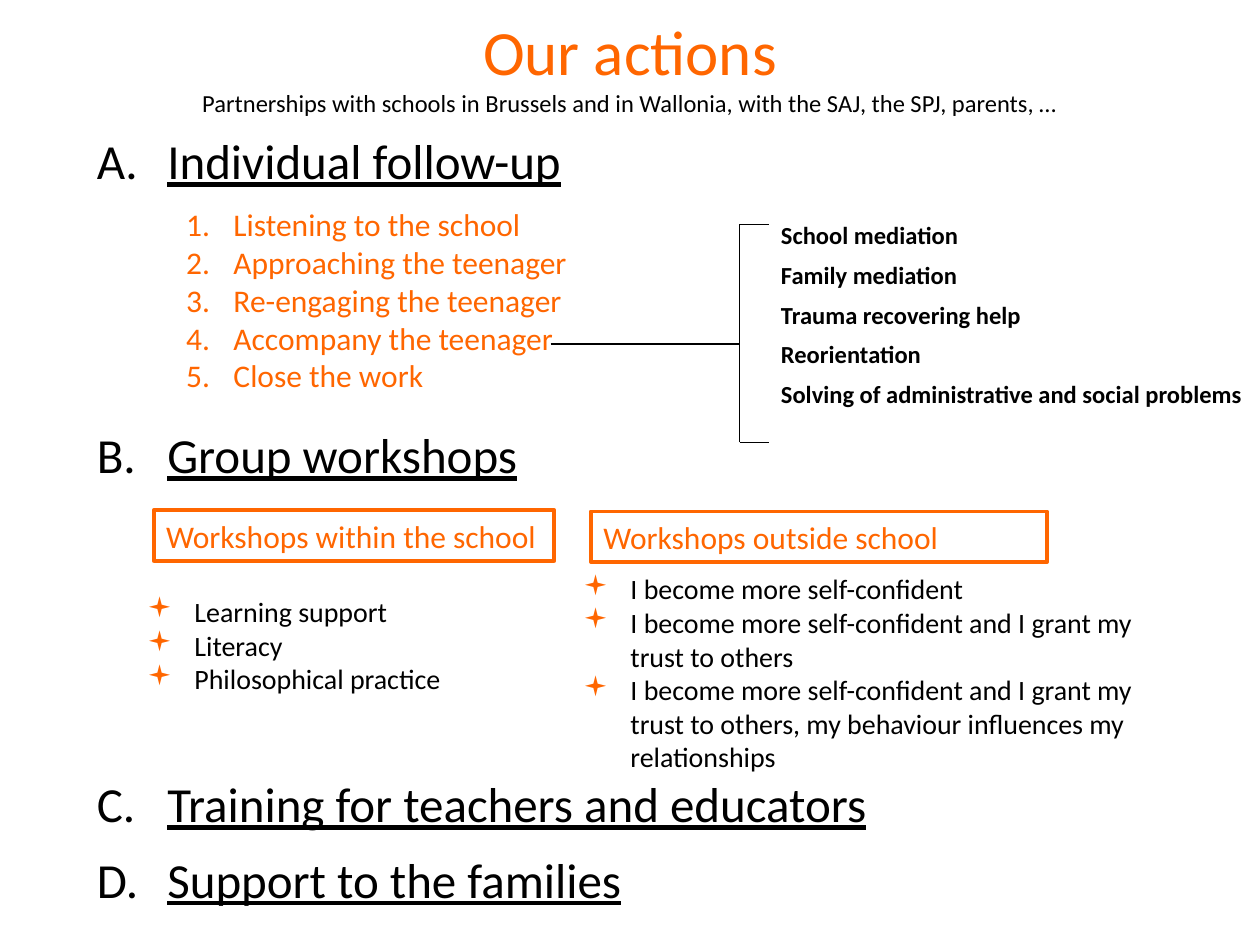
from dataclasses import dataclass

from lxml import etree
from pptx import Presentation
from pptx.dml.color import RGBColor
from pptx.enum.shapes import MSO_CONNECTOR, MSO_SHAPE
from pptx.enum.text import MSO_ANCHOR, PP_ALIGN
from pptx.oxml.ns import qn
from pptx.util import Inches, Pt

STRAIGHT = MSO_CONNECTOR.STRAIGHT
RECTANGLE = MSO_SHAPE.RECTANGLE
TOP, MIDDLE = MSO_ANCHOR.TOP, MSO_ANCHOR.MIDDLE
LEFT, CENTER = PP_ALIGN.LEFT, PP_ALIGN.CENTER
ORANGE, BLACK = "FF6600", "000000"
FONT = "Calibri"
COLUMNS, ROWS = 100, 75  # grid over the slide

prs = Presentation()
prs.slide_width, prs.slide_height = Inches(10), Inches(7.5)
slide = prs.slides.add_slide(prs.slide_layouts[6])


@dataclass(frozen=True)
class Area:
    """A rectangle in grid columns and rows."""
    column: float
    row: float
    columns: float
    rows: float

    def box(self) -> tuple[int, int, int, int]:
        return x(self.column), y(self.row), x(self.columns), y(self.rows)


@dataclass(frozen=True)
class Style:
    size: float
    color: str = BLACK
    bold: bool = False
    underline: bool = False


@dataclass(frozen=True)
class Marker:
    """A list marker: an automatic number scheme, or else a square bullet."""
    indent: float
    scheme: str = ""
    start: int = 1


@dataclass(frozen=True)
class Section:
    title: str
    row: float


@dataclass(frozen=True)
class Workshop:
    title: str
    frame: Area
    topics: list[str]
    topics_area: Area


def x(columns: float) -> int:
    return round(prs.slide_width * columns / COLUMNS)


def y(rows: float) -> int:
    return round(prs.slide_height * rows / ROWS)


def rgb(color: str) -> RGBColor:
    return RGBColor.from_string(color)


def mark(paragraph, marker: Marker) -> None:
    props = paragraph._p.get_or_add_pPr()
    indent = x(marker.indent)
    props.set("marL", str(indent))
    props.set("indent", str(-indent))
    if marker.scheme:
        etree.SubElement(props, qn("a:buFont"), typeface="+mj-lt")
        etree.SubElement(props, qn("a:buAutoNum"), type=marker.scheme,
                         startAt=str(marker.start))
    else:
        bullet_color = etree.SubElement(props, qn("a:buClr"))
        etree.SubElement(bullet_color, qn("a:srgbClr"), val=ORANGE)
        etree.SubElement(props, qn("a:buFont"), typeface="Wingdings")
        etree.SubElement(props, qn("a:buChar"), char="▪")


def write(paragraph, text: str, style: Style, align=LEFT) -> None:
    paragraph.alignment = align
    run = paragraph.add_run()
    run.text = text
    formats = {"name": FONT, "size": Pt(style.size), "bold": style.bold,
               "underline": style.underline}
    for attribute, value in formats.items():
        setattr(run.font, attribute, value)
    run.font.color.rgb = rgb(style.color)


def add_text(area: Area, lines: list[str], styles: list[Style], align=LEFT,
             marker: Marker | None = None, wrap: bool = True) -> None:
    """Write one paragraph per line; the last style serves all further lines."""
    frame = slide.shapes.add_textbox(*area.box()).text_frame
    frame.word_wrap = wrap
    frame.vertical_anchor = TOP
    for i, line in enumerate(lines):
        paragraph = frame.add_paragraph() if i else frame.paragraphs[0]
        write(paragraph, line, styles[min(i, len(styles) - 1)], align)
        if marker:
            mark(paragraph, marker)


def add_frame(area: Area, title: str) -> None:
    frame = slide.shapes.add_shape(RECTANGLE, *area.box())
    frame.shadow.inherit = False
    frame.fill.background()
    frame.line.color.rgb = rgb(ORANGE)
    frame.line.width = Pt(2.25)
    frame.text_frame.word_wrap = True
    frame.text_frame.vertical_anchor = MIDDLE
    write(frame.text_frame.paragraphs[0], title, Style(18, ORANGE))


def add_line(start: tuple[float, float], end: tuple[float, float]) -> None:
    line = slide.shapes.add_connector(
        STRAIGHT, x(start[0]), y(start[1]), x(end[0]), y(end[1]))
    line.line.color.rgb = rgb(BLACK)
    line.line.width = Pt(0.75)
    etree.SubElement(line._element.spPr, qn("a:effectLst"))


SECTIONS = [
    Section("Individual follow-up", 9.9),
    Section("Group workshops", 33.2),
    Section("Training for teachers and educators", 60.9),
    Section("Support to the families", 66.9),
]
STEPS = ["Listening to the school", "Approaching the teenager",
         "Re-engaging the teenager", "Accompany the teenager", "Close the work"]
SUPPORTS = ["School mediation", "Family mediation", "Trauma recovering help",
            "Reorientation", "Solving of administrative and social problems"]
WORKSHOPS = [
    Workshop("Workshops within the school", Area(12.2, 40.5, 31.8, 4),
             ["Learning support", "Literacy", "Philosophical practice"],
             Area(10.7, 46.7, 33, 9.1)),
    Workshop("Workshops outside school", Area(46.9, 40.6, 36.2, 4),
             ["I become more self-confident",
              "I become more self-confident and I grant my trust to others",
              "I become more self-confident and I grant my trust to others, "
              "my behaviour influences my relationships"],
             Area(45.3, 44.9, 47.2, 17.2)),
]

add_text(Area(5, 0.5, 90, 7.7),
         ["Our actions", "Partnerships with schools in Brussels and in Wallonia, "
          "with the SAJ, the SPJ, parents, …"],
         [Style(36, ORANGE), Style(14)], CENTER)

for number, section in enumerate(SECTIONS, 1):
    add_text(Area(6.7, section.row, 87.3, 5.7), [section.title],
             [Style(28, underline=True)],
             marker=Marker(5.6, "alphaUcPeriod", number))

add_text(Area(13.8, 15.8, 32.6, 16.2), STEPS, [Style(18, ORANGE)],
         marker=Marker(3.75, "arabicPeriod"), wrap=False)

for workshop in WORKSHOPS:
    add_frame(workshop.frame, workshop.title)
    add_text(workshop.topics_area, workshop.topics, [Style(16)],
             marker=Marker(3.75))

STEM, TIP, BRACKET_TOP, BRACKET_BOTTOM, STEP_ROW = 58.7, 61, 17.8, 35.1, 27.3
add_line((43.7, STEP_ROW), (STEM, STEP_ROW))
add_line((STEM, BRACKET_BOTTOM), (STEM, BRACKET_TOP))
for row in (BRACKET_TOP, BRACKET_BOTTOM):
    add_line((STEM, row), (TIP, row))

SUPPORT_PITCH = 3.15
for i, support in enumerate(SUPPORTS):
    add_text(Area(TIP, 17 + i * SUPPORT_PITCH, 39, 3.4), [support],
             [Style(14, bold=True)], wrap=False)

prs.save("out.pptx")
